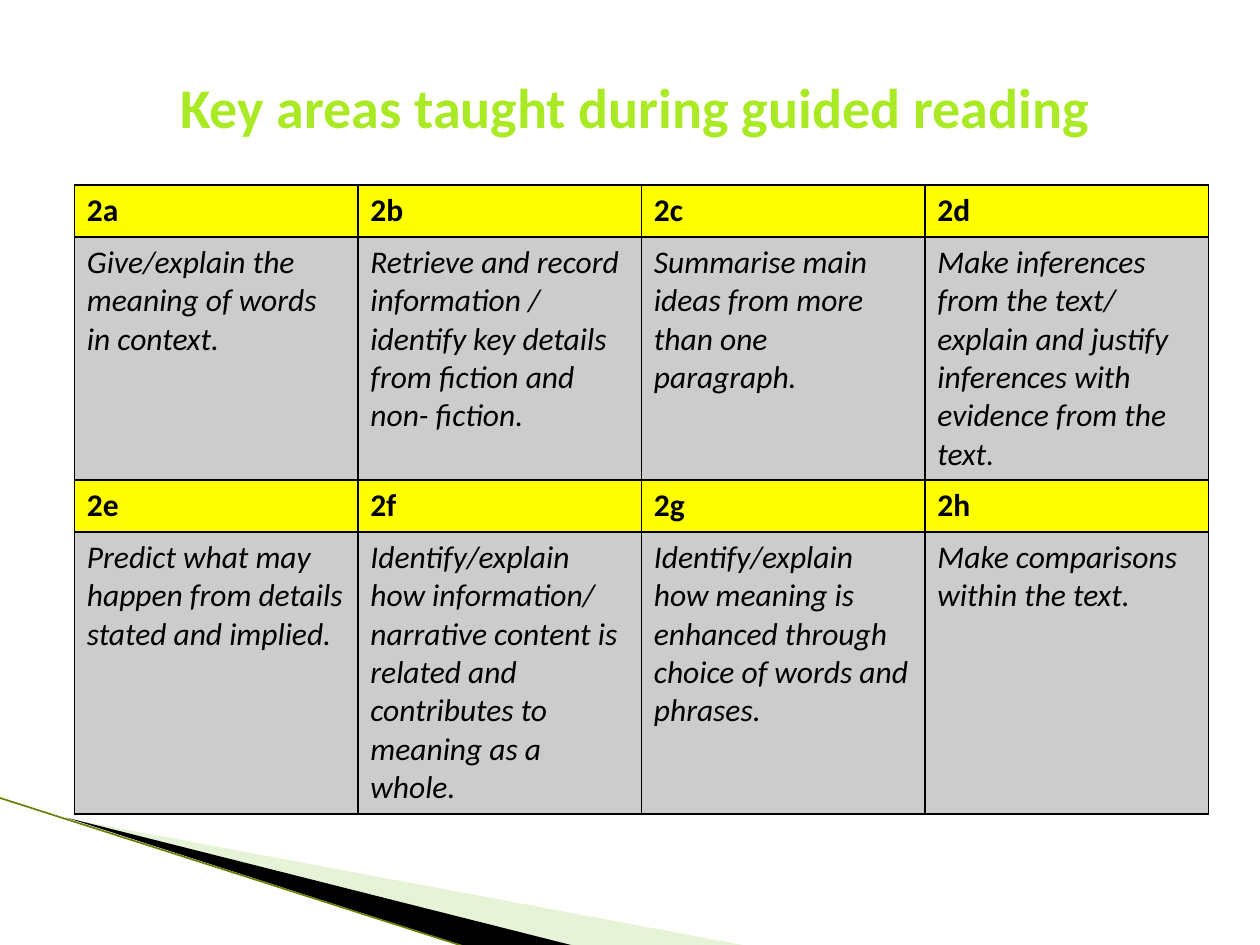
from lxml import etree
from pptx import Presentation
from pptx.dml.color import RGBColor
from pptx.enum.shapes import MSO_CONNECTOR
from pptx.enum.text import MSO_ANCHOR, PP_ALIGN
from pptx.oxml.ns import qn
from pptx.util import Inches, Pt

STRAIGHT = MSO_CONNECTOR.STRAIGHT
MIDDLE = MSO_ANCHOR.MIDDLE
CENTER = PP_ALIGN.CENTER

FONT = "Calibri"
COLORS = {
    "title": "AAEA25",
    "text": "000000",
    "border": "000000",
    "code": "FFFF00",
    "description": "CCCCCC",
    "pale_wedge": "C3E19D",
    "dark_wedge": "000000",
    "edge": "6B8000",
}

AREAS = [
    ("2a", "Give/explain the meaning of words in context."),
    ("2b", "Retrieve and record information / identify key details from "
           "fiction and non- fiction."),
    ("2c", "Summarise main ideas from more than one paragraph."),
    ("2d", "Make inferences from the text/ explain and justify inferences "
           "with evidence from the text."),
    ("2e", "Predict what may happen from details stated and implied."),
    ("2f", "Identify/explain how information/ narrative content is related "
           "and contributes to meaning as a whole."),
    ("2g", "Identify/explain how meaning is enhanced through choice of words "
           "and phrases."),
    ("2h", "Make comparisons within the text."),
]
AREAS_PER_ROW = 4
ROW_HEIGHTS = [0.41, 1.93, 0.41, 2.24]


def color(name):
    return RGBColor.from_string(COLORS[name])


def style_text(paragraph, size, color_name, bold=False, italic=False):
    for run in paragraph.runs:
        run.font.name = FONT
        run.font.size = Pt(size)
        run.font.bold = bold
        run.font.italic = italic
        run.font.color.rgb = color(color_name)


def add_wedge(slide, points, color_name, opacity=None):
    """Draw a filled outline without a border; opacity is in percent."""
    corners = [(Inches(x), Inches(y)) for x, y in points]
    builder = slide.shapes.build_freeform(*corners[0])
    builder.add_line_segments(corners[1:], close=True)
    wedge = builder.convert_to_shape()
    wedge.shadow.inherit = False
    wedge.fill.solid()
    wedge.fill.fore_color.rgb = color(color_name)
    wedge.line.fill.background()
    if opacity is not None:
        fill_color = wedge.fill._xPr.find(".//" + qn("a:srgbClr"))
        etree.SubElement(fill_color, qn("a:alpha"), val=str(opacity * 1000))


def add_edge(slide, start, end):
    edge = slide.shapes.add_connector(
        STRAIGHT, *(Inches(value) for value in start + end))
    edge.line.color.rgb = color("edge")
    edge.line.width = Pt(0.95)
    etree.SubElement(edge._element.spPr, qn("a:effectLst"))


def add_corner_decoration(slide):
    add_wedge(slide, [(0.55, 6.5), (5.95, 7.51), (4.56, 7.51)],
              "pale_wedge", opacity=40)
    add_wedge(slide, [(0.53, 6.49), (4.57, 7.51), (3.72, 7.52)], "dark_wedge")
    add_edge(slide, (-0.01, 6.33), (3.71, 7.52))


def add_borders(cell):
    properties = cell._tc.get_or_add_tcPr()
    for position, side in enumerate(("lnL", "lnR", "lnT", "lnB")):
        border = etree.Element(qn("a:" + side), w=str(Pt(1)))
        fill = etree.SubElement(border, qn("a:solidFill"))
        etree.SubElement(fill, qn("a:srgbClr"), val=COLORS["border"])
        properties.insert(position, border)


def fill_cell(cell, text, kind):
    cell.text_frame.text = text
    is_code = kind == "code"
    style_text(cell.text_frame.paragraphs[0], 18, "text",
               bold=is_code, italic=not is_code)
    cell.fill.solid()
    cell.fill.fore_color.rgb = color(kind)
    add_borders(cell)


def add_areas_table(slide):
    """Each band of areas takes a row of codes and a row of descriptions."""
    table = slide.shapes.add_table(
        len(ROW_HEIGHTS), AREAS_PER_ROW, Inches(0.59), Inches(1.47),
        Inches(9), Inches(sum(ROW_HEIGHTS))).table
    for row, height in zip(table.rows, ROW_HEIGHTS):
        row.height = Inches(height)
    for index, (code, description) in enumerate(AREAS):
        band, column = divmod(index, AREAS_PER_ROW)
        fill_cell(table.cell(2 * band, column), code, "code")
        fill_cell(table.cell(2 * band + 1, column), description, "description")


def add_title(slide, text):
    frame = slide.shapes.add_textbox(
        Inches(0.48), Inches(0.22), Inches(9.22), Inches(1.25)).text_frame
    frame.word_wrap = True
    frame.vertical_anchor = MIDDLE
    frame.text = text
    heading = frame.paragraphs[0]
    heading.alignment = CENTER
    style_text(heading, 32, "title", bold=True)


def main():
    presentation = Presentation()
    presentation.slide_width = Inches(10)
    presentation.slide_height = Inches(7.5)
    slide = presentation.slides.add_slide(presentation.slide_layouts[6])
    add_corner_decoration(slide)
    add_areas_table(slide)
    add_title(slide, "Key areas taught during guided reading ")
    presentation.save("out.pptx")


if __name__ == "__main__":
    main()
